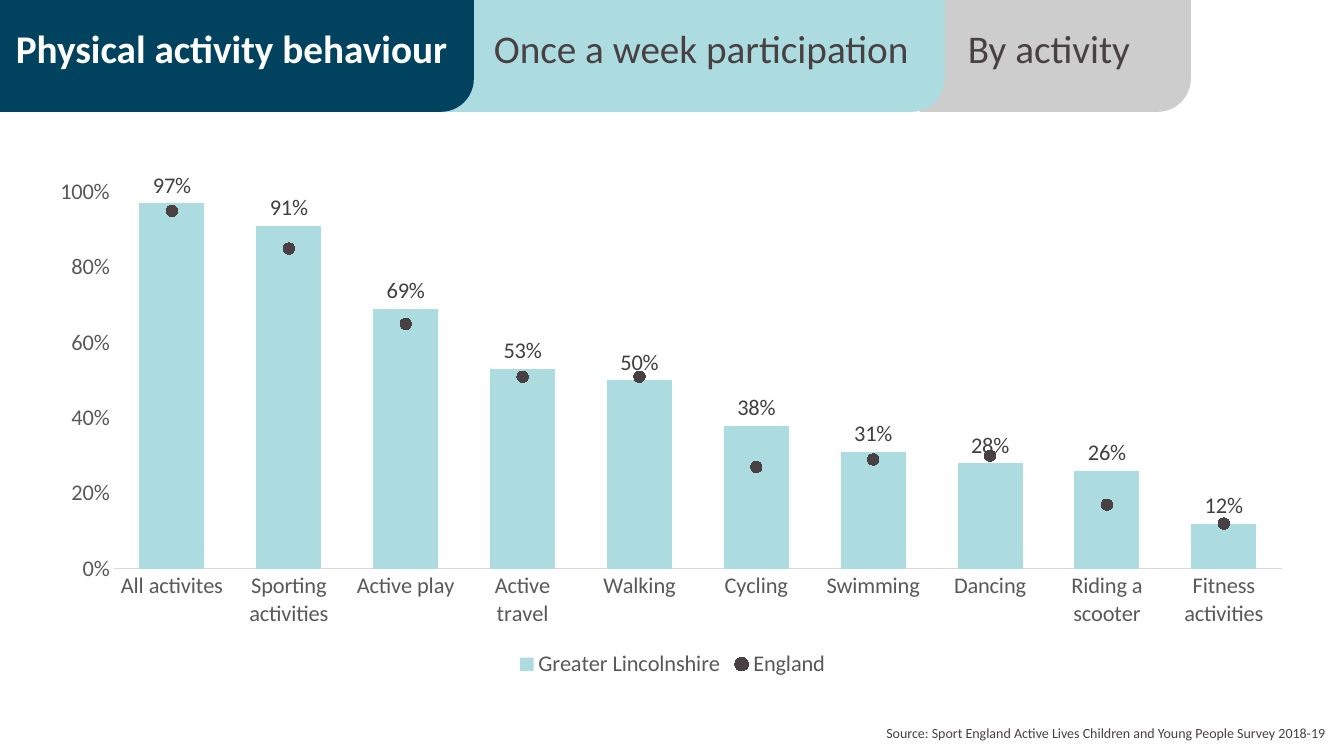
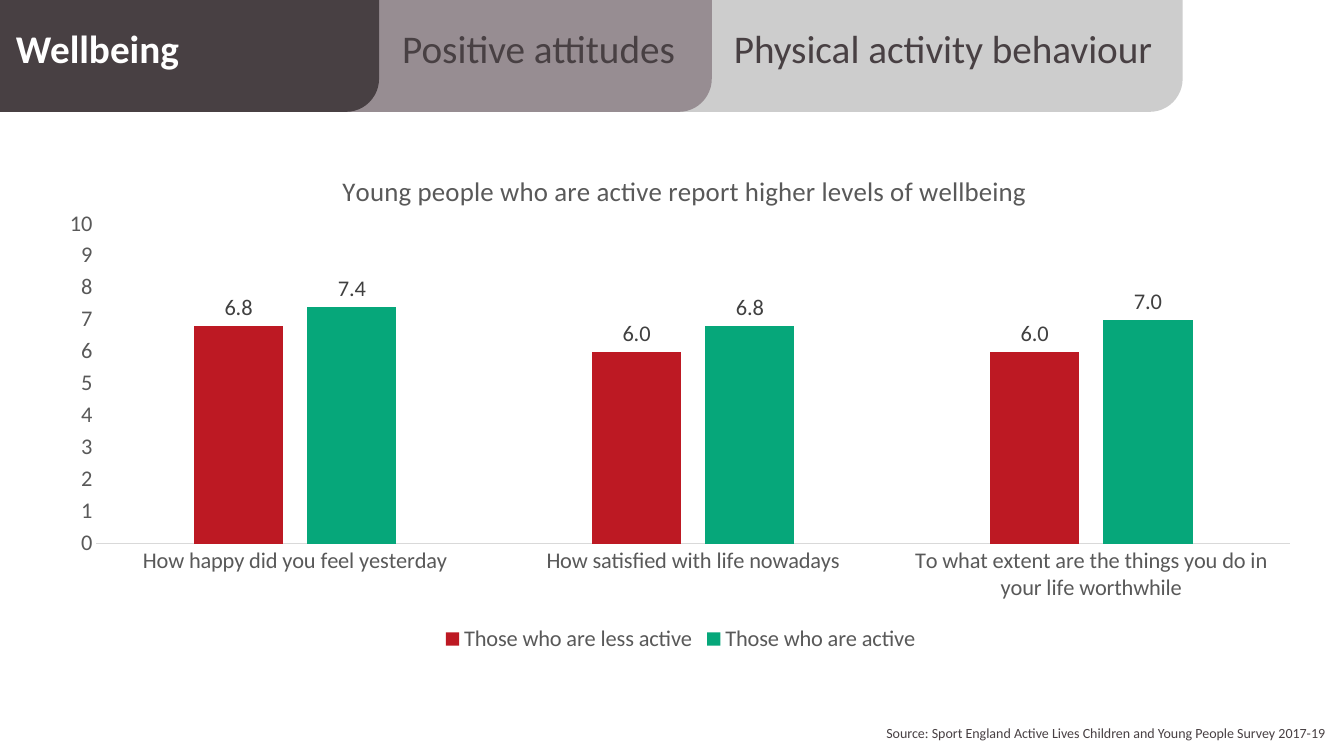
from dataclasses import dataclass
from typing import Optional

from lxml import etree
from pptx import Presentation
from pptx.chart.chart import Chart
from pptx.chart.data import CategoryChartData
from pptx.dml.color import RGBColor
from pptx.enum.chart import (
    XL_CHART_TYPE, XL_LABEL_POSITION, XL_LEGEND_POSITION, XL_MARKER_STYLE, XL_TICK_MARK,
)
from pptx.enum.shapes import MSO_SHAPE
from pptx.enum.text import PP_ALIGN
from pptx.oxml.ns import qn
from pptx.oxml.xmlchemy import OxmlElement
from pptx.slide import Slide
from pptx.util import Inches, Pt

COLUMNS = XL_CHART_TYPE.COLUMN_CLUSTERED
OUTSIDE_END = XL_LABEL_POSITION.OUTSIDE_END
LEGEND_BOTTOM = XL_LEGEND_POSITION.BOTTOM
CIRCLE = XL_MARKER_STYLE.CIRCLE
NO_TICK = XL_TICK_MARK.NONE
ROUND_CORNER = MSO_SHAPE.ROUND_1_RECTANGLE
LEFT, RIGHT = PP_ALIGN.LEFT, PP_ALIGN.RIGHT

WHITE = RGBColor(0xFF, 0xFF, 0xFF)
CHARCOAL = RGBColor(0x48, 0x40, 0x43)
MAUVE = RGBColor(0x97, 0x8D, 0x92)
SILVER = RGBColor(0xCD, 0xCD, 0xCD)
NAVY = RGBColor(0x01, 0x42, 0x5F)
AQUA = RGBColor(0xAC, 0xDC, 0xDF)
RED = RGBColor(0xBD, 0x19, 0x23)
GREEN = RGBColor(0x06, 0xA7, 0x7A)
AXIS_TEXT = RGBColor(0x59, 0x59, 0x59)
LABEL_TEXT = RGBColor(0x40, 0x40, 0x40)
AXIS_LINE = RGBColor(0xD9, 0xD9, 0xD9)

FONT = "Calibri"
TAB_HEIGHT = 1.11
SOURCE = "Source: Sport England Active Lives Children and Young People Survey "


@dataclass(frozen=True)
class Tab:
    text: str
    left: float
    width: float
    fill: RGBColor
    text_left: float
    text_width: float
    color: RGBColor = CHARCOAL
    bold: bool = False


@dataclass(frozen=True)
class Series:
    name: str
    values: tuple[float, ...]
    color: RGBColor
    dots: bool = False


@dataclass(frozen=True)
class ChartSpec:
    left: float
    top: float
    categories: tuple[str, ...]
    series: tuple[Series, ...]
    plot_area: tuple[float, ...]
    maximum: float
    major_unit: float
    axis_format: str
    label_format: str
    gap: int
    overlap: int
    title: Optional[str] = None


@dataclass(frozen=True)
class Page:
    tabs: tuple[Tab, ...]
    chart: ChartSpec
    years: str


PAGES = (
    Page(
        tabs=(
            Tab("Physical activity behaviour", 0, 4.7, NAVY, 0.06, 5.32, WHITE, True),
            Tab("Once a week participation", 4.33, 5.04, AQUA, 4.8, 4.7),
            Tab("By activity", 9.12, 2.69, SILVER, 9.5, 2.18),
        ),
        chart=ChartSpec(
            left=0.37, top=1.65,
            categories=("All activites", "Sporting activities", "Active play",
                        "Active travel", "Walking", "Cycling", "Swimming", "Dancing",
                        "Riding a scooter", "Fitness activities"),
            series=(
                Series("Greater Lincolnshire",
                       (0.97, 0.91, 0.69, 0.53, 0.5, 0.38, 0.31, 0.28, 0.26, 0.12), AQUA),
                Series("England",
                       (0.95, 0.85, 0.65, 0.51, 0.51, 0.27, 0.29, 0.3, 0.17, 0.12),
                       CHARCOAL, dots=True),
            ),
            plot_area=(0.06, 0.05, 0.92, 0.73), maximum=1, major_unit=0.2,
            axis_format="0%", label_format="0%", gap=80, overlap=100,
        ),
        years="2018-19",
    ),
    Page(
        tabs=(
            Tab("Wellbeing", 0, 3.76, CHARCOAL, 0.06, 5.32, WHITE, True),
            Tab("Positive attitudes", 2.6, 4.46, MAUVE, 3.89, 3.11),
            Tab("Physical activity behaviour", 6.66, 5.07, SILVER, 7.18, 4.46),
        ),
        chart=ChartSpec(
            left=0.45, top=1.4,
            categories=("How happy did you feel yesterday",
                        "How satisfied with life nowadays",
                        "To what extent are the things you do in your life worthwhile"),
            series=(
                Series("Those who are less active", (6.8, 6, 6), RED),
                Series("Those who are active", (7.4, 6.8, 7), GREEN),
            ),
            plot_area=(0.04, 0.16, 0.94, 0.62), maximum=10, major_unit=1,
            axis_format="#,##0", label_format="#,##0.0", gap=219, overlap=-27,
            title="Young people who are active report higher levels of wellbeing",
        ),
        years="2017-19",
    ),
)


def set_font(font, size: float, color: RGBColor, bold: bool = False) -> None:
    font.name, font.size, font.bold = FONT, Pt(size), bold
    font.color.rgb = color


def add_text(s: Slide, text: str, *, left: float, top: float, width: float, height: float,
             size: float, color: RGBColor = CHARCOAL, bold: bool = False,
             align: PP_ALIGN = LEFT) -> None:
    tf = s.shapes.add_textbox(
        Inches(left), Inches(top), Inches(width), Inches(height)).text_frame
    tf.word_wrap = True
    p = tf.paragraphs[0]
    p.alignment = align
    r = p.add_run()
    r.text = text
    set_font(r.font, size, color, bold)


def add_tabs(s: Slide, tabs: tuple[Tab, ...]) -> None:
    for tab in reversed(tabs):
        sp = s.shapes.add_shape(
            ROUND_CORNER, Inches(tab.left), 0, Inches(tab.width), Inches(TAB_HEIGHT))
        sp.adjustments[0] = 0.295
        sp._element.spPr.find(qn("a:xfrm")).set("flipV", "1")
        sp.shadow.inherit = False
        sp.fill.solid()
        sp.fill.fore_color.rgb = tab.fill
        sp.line.fill.background()
    for tab in tabs:
        add_text(s, tab.text, left=tab.text_left, top=0.19, width=tab.text_width,
                 height=0.57, size=28, color=tab.color, bold=tab.bold)


def set_layout(parent, index: int, **fractions: float) -> None:
    for old in parent.findall(qn("c:layout")):
        parent.remove(old)
    layout = OxmlElement("c:layout")
    manual = etree.SubElement(layout, qn("c:manualLayout"))
    if "w" in fractions:
        etree.SubElement(manual, qn("c:layoutTarget")).set("val", "inner")
    for mode in ("xMode", "yMode"):
        etree.SubElement(manual, qn(f"c:{mode}")).set("val", "edge")
    for key, value in fractions.items():
        etree.SubElement(manual, qn(f"c:{key}")).set("val", str(value))
    parent.insert(index, layout)


def move_last_series_to_dots(chart: Chart, color: RGBColor) -> None:
    bars = chart._chartSpace.find(".//" + qn("c:barChart"))
    ser = bars.findall(qn("c:ser"))[-1]
    for invert in ser.findall(qn("c:invertIfNegative")):
        ser.remove(invert)
    lines = OxmlElement("c:lineChart")
    etree.SubElement(lines, qn("c:grouping")).set("val", "standard")
    etree.SubElement(lines, qn("c:varyColors")).set("val", "0")
    lines.append(ser)
    etree.SubElement(lines, qn("c:marker")).set("val", "1")
    for axis in bars.findall(qn("c:axId")):
        etree.SubElement(lines, qn("c:axId")).set("val", axis.get("val"))
    bars.addnext(lines)
    dots = chart.plots[1].series[0]
    dots.smooth = False
    dots.format.line.fill.background()
    dots.marker.style, dots.marker.size = CIRCLE, 8
    dots.marker.format.fill.solid()
    dots.marker.format.fill.fore_color.rgb = color
    dots.marker.format.line.color.rgb = color


def style_axes(chart: Chart, spec: ChartSpec) -> None:
    for axis in (chart.category_axis, chart.value_axis):
        axis.major_tick_mark = axis.minor_tick_mark = NO_TICK
        axis.has_major_gridlines = False
        set_font(axis.tick_labels.font, 16, AXIS_TEXT)
    chart.category_axis.format.line.color.rgb = AXIS_LINE
    chart.category_axis.format.line.width = Pt(0.75)
    values = chart.value_axis
    values.format.line.fill.background()
    values.minimum_scale, values.maximum_scale = 0, spec.maximum
    values.major_unit = spec.major_unit
    values.tick_labels.number_format = spec.axis_format
    values.tick_labels.number_format_is_linked = False


def add_column_chart(s: Slide, spec: ChartSpec) -> None:
    data = CategoryChartData()
    data.categories = spec.categories
    for item in spec.series:
        data.add_series(item.name, item.values)
    chart = s.shapes.add_chart(COLUMNS, Inches(spec.left), Inches(spec.top),
                               Inches(12.6), Inches(5.12), data).chart
    set_font(chart.font, 16, AXIS_TEXT)
    chart.has_title = spec.title is not None
    if spec.title:
        r = chart.chart_title.text_frame.paragraphs[0].add_run()
        r.text = spec.title
        set_font(r.font, 19.2, AXIS_TEXT)
        set_layout(chart._chartSpace.find(".//" + qn("c:title")), 1, x=0.23, y=0.05)
    chart.has_legend = True
    chart.legend.position = LEGEND_BOTTOM
    chart.legend.include_in_layout = False
    set_font(chart.legend.font, 16, AXIS_TEXT)
    style_axes(chart, spec)
    if spec.series[-1].dots:
        move_last_series_to_dots(chart, spec.series[-1].color)
    plot = chart.plots[0]
    plot.vary_by_categories = False
    plot.gap_width, plot.overlap = spec.gap, spec.overlap
    for bar, item in zip(plot.series, spec.series):
        bar.format.fill.solid()
        bar.format.fill.fore_color.rgb = item.color
        labels = bar.data_labels
        labels.show_value = True
        labels.position = OUTSIDE_END
        labels.number_format = spec.label_format
        labels.number_format_is_linked = False
        set_font(labels.font, 16, LABEL_TEXT)
    plot_area = chart._chartSpace.find(".//" + qn("c:plotArea"))
    set_layout(plot_area, 0, **dict(zip("xywh", spec.plot_area)))


def main() -> None:
    prs = Presentation()
    prs.slide_width, prs.slide_height = Inches(13.33), Inches(7.5)
    for page in PAGES:
        s = prs.slides.add_slide(prs.slide_layouts[6])
        add_text(s, SOURCE + page.years, left=5.95, top=7.14, width=7.29, height=0.27,
                 size=10, align=RIGHT)
        add_tabs(s, page.tabs)
        add_column_chart(s, page.chart)
    prs.save("out.pptx")


if __name__ == "__main__":
    main()
